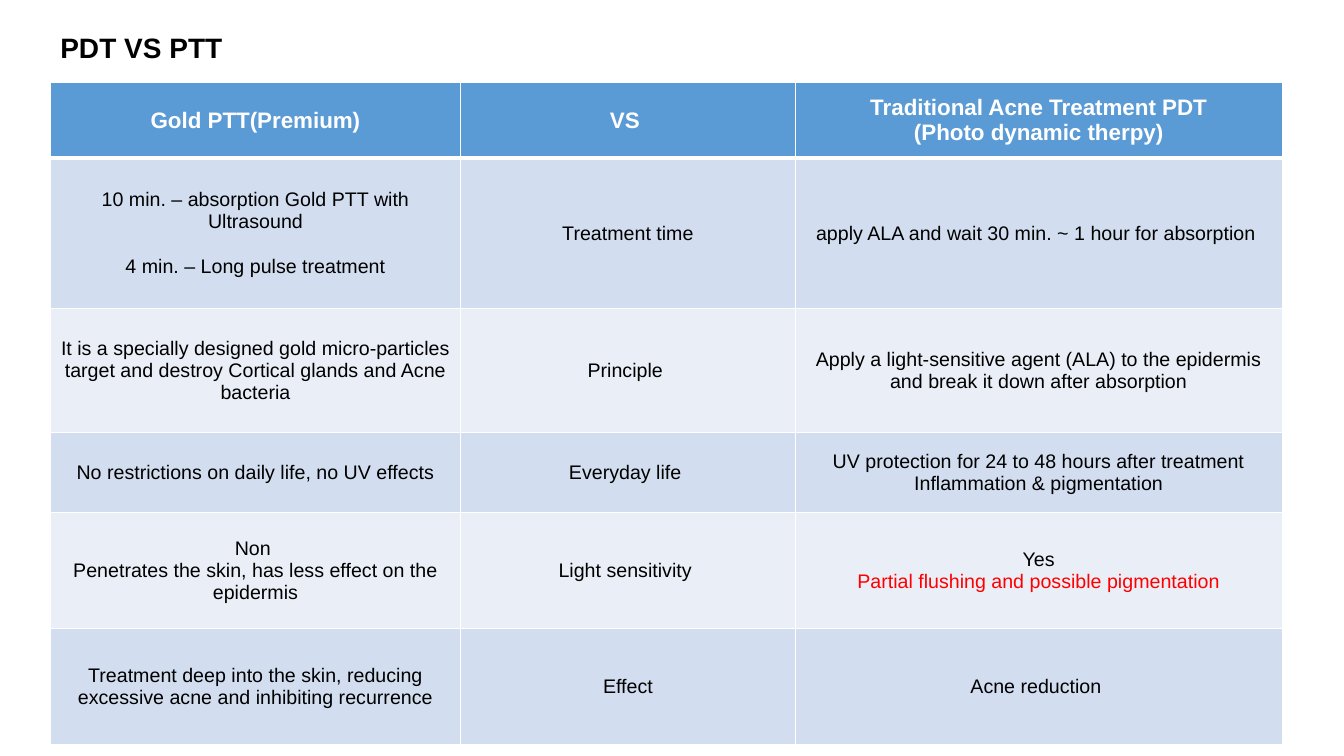
from lxml.etree import SubElement as Sub
from pptx import Presentation
from pptx.dml.color import RGBColor as Rgb
from pptx.enum.text import MSO_ANCHOR as Anchor, MSO_AUTO_SIZE as Fit, PP_ALIGN as Align
from pptx.oxml.ns import qn
from pptx.util import Inches, Pt

WHITE = Rgb(0xFF, 0xFF, 0xFF)
BLACK = Rgb(0x00, 0x00, 0x00)
RED = Rgb(0xFF, 0x00, 0x00)
BLUE = Rgb(0x5B, 0x9B, 0xD5)
MIST = Rgb(0xD2, 0xDE, 0xEF)
PALE = Rgb(0xEA, 0xEF, 0xF7)

COLS = [48.84, 39.84, 57.96]
ROWS = [9, 17.88, 14.76, 9.6, 13.8, 13.8]
WARNING = "Partial flushing and possible pigmentation"
STEP = "4 min. – Long pulse treatment"
CELLS = [
    ["Gold PTT(Premium)", "VS ",
     "Traditional Acne Treatment PDT\n(Photo dynamic therpy)"],
    ["10 min. – absorption Gold PTT with Ultrasound\n" + STEP, "Treatment time",
     "apply ALA and wait 30 min. ~ 1 hour for absorption "],
    ["It is a specially designed gold micro-particles target and destroy "
     "Cortical glands and Acne bacteria", "Principle ",
     "Apply a light-sensitive agent (ALA) to the epidermis and break it down "
     "after absorption"],
    ["No restrictions on daily life, no UV effects", "Everyday life ",
     "UV protection for 24 to 48 hours after treatment\nInflammation & pigmentation"],
    ["Non \nPenetrates the skin, has less effect on the epidermis",
     "Light sensitivity ", "Yes\n" + WARNING],
    ["Treatment deep into the skin, reducing excessive acne and inhibiting recurrence",
     "Effect", "Acne reduction "],
]


class Deck:
    font = "Arial"
    grid = 160

    def __init__(self):
        self.prs = Presentation()
        self.prs.slide_width = Inches(13.33)
        self.prs.slide_height = Inches(7.5)
        self.slide = self.prs.slides.add_slide(self.prs.slide_layouts[6])

    def unit(self, count):
        return round(self.prs.slide_width * count / self.grid)

    def style(self, para, size, color, bold=False):
        for run in para.runs:
            run.font.name = self.font
            run.font.size = Pt(size)
            run.font.bold = bold
            run.font.color.rgb = color

    def title(self, text, *box):
        frame = self.slide.shapes.add_textbox(*map(self.unit, box)).text_frame
        frame.text = text
        frame.word_wrap = False
        frame.auto_size = Fit.SHAPE_TO_FIT_TEXT
        self.style(frame.paragraphs[0], 20, BLACK, True)

    def border(self, cell, row):
        props = cell._tc.get_or_add_tcPr()
        for side in "LRTB":
            thick = (row, side) in ((0, "B"), (1, "T"))
            line = Sub(props, qn("a:ln" + side), w=str(Pt(3 if thick else 1)))
            Sub(Sub(line, qn("a:solidFill")), qn("a:srgbClr"), val=str(WHITE))

    def cell(self, cell, text, row):
        self.border(cell, row)
        cell.fill.solid()
        cell.fill.fore_color.rgb = BLUE if row == 0 else MIST if row % 2 else PALE
        cell.vertical_anchor = Anchor.MIDDLE
        cell.text_frame.text = text
        for para in cell.text_frame.paragraphs:
            para.alignment = Align.CENTER
            if para.text == STEP:
                para.space_before = Pt(16)
            if row == 0:
                self.style(para, 16, WHITE, True)
            else:
                self.style(para, 14, RED if para.text == WARNING else BLACK)

    def table(self, left, top, cols, rows, cells):
        box = map(self.unit, (left, top, sum(cols), sum(rows)))
        table = self.slide.shapes.add_table(len(rows), len(cols), *box).table
        for col, width in zip(table.columns, cols):
            col.width = self.unit(width)
        for row, height in zip(table.rows, rows):
            row.height = self.unit(height)
        for row, texts in enumerate(cells):
            for col, text in enumerate(texts):
                self.cell(table.cell(row, col), text, row)


def main():
    deck = Deck()
    deck.table(6, 9.84, COLS, ROWS, CELLS)
    deck.title("PDT VS PTT", 6, 3, 21.84, 5.28)
    deck.prs.save("out.pptx")


if __name__ == "__main__":
    main()
